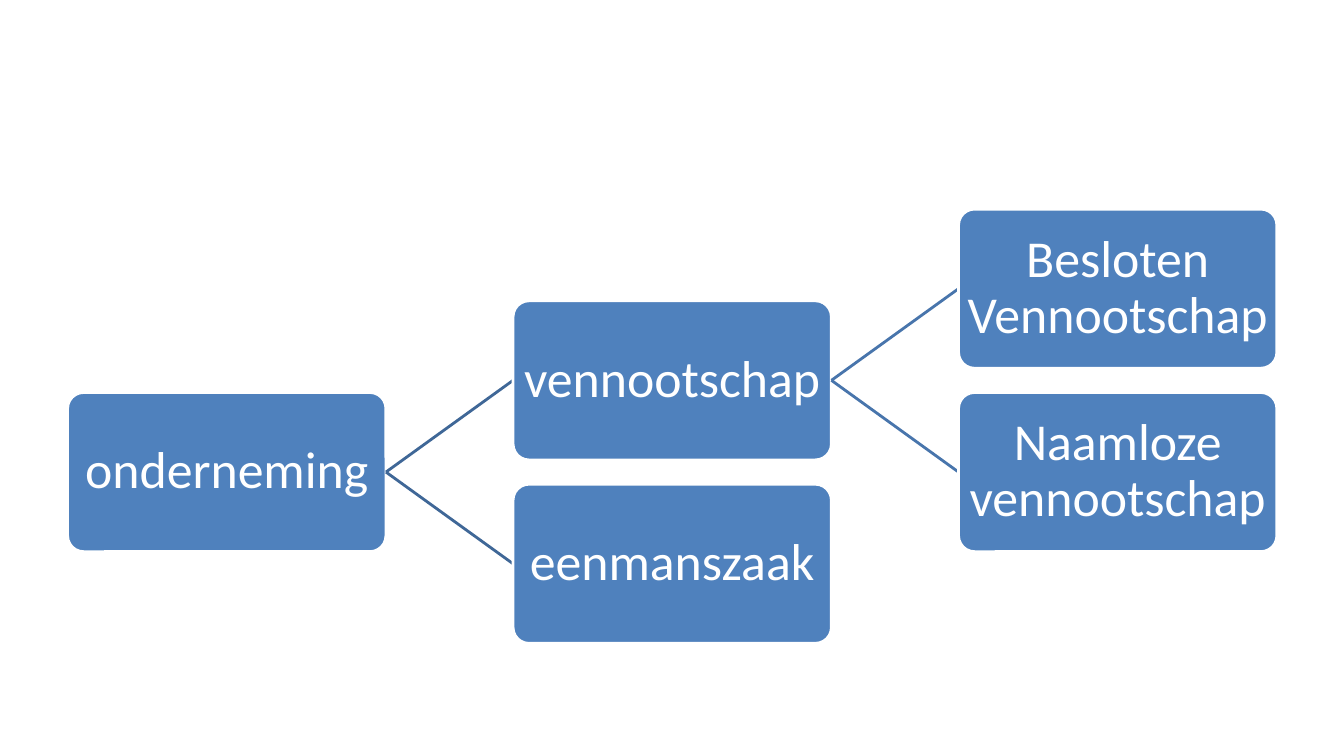
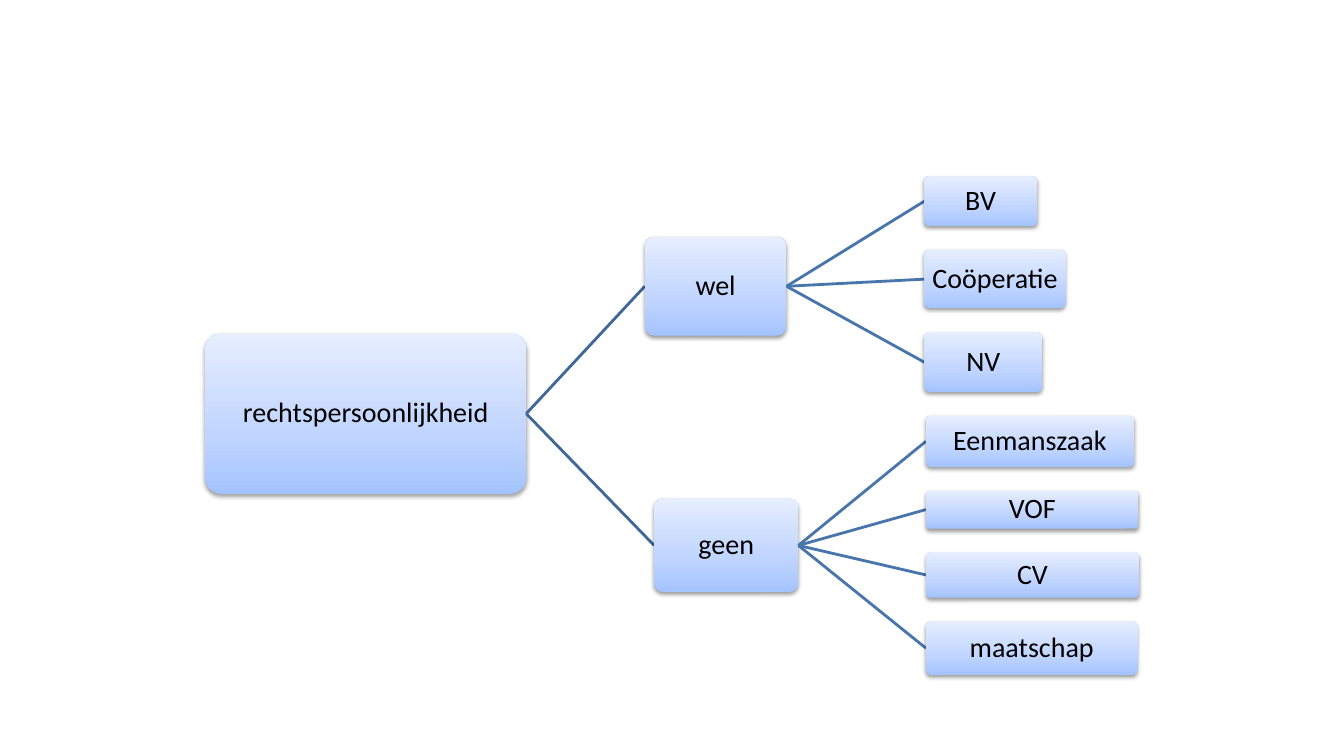
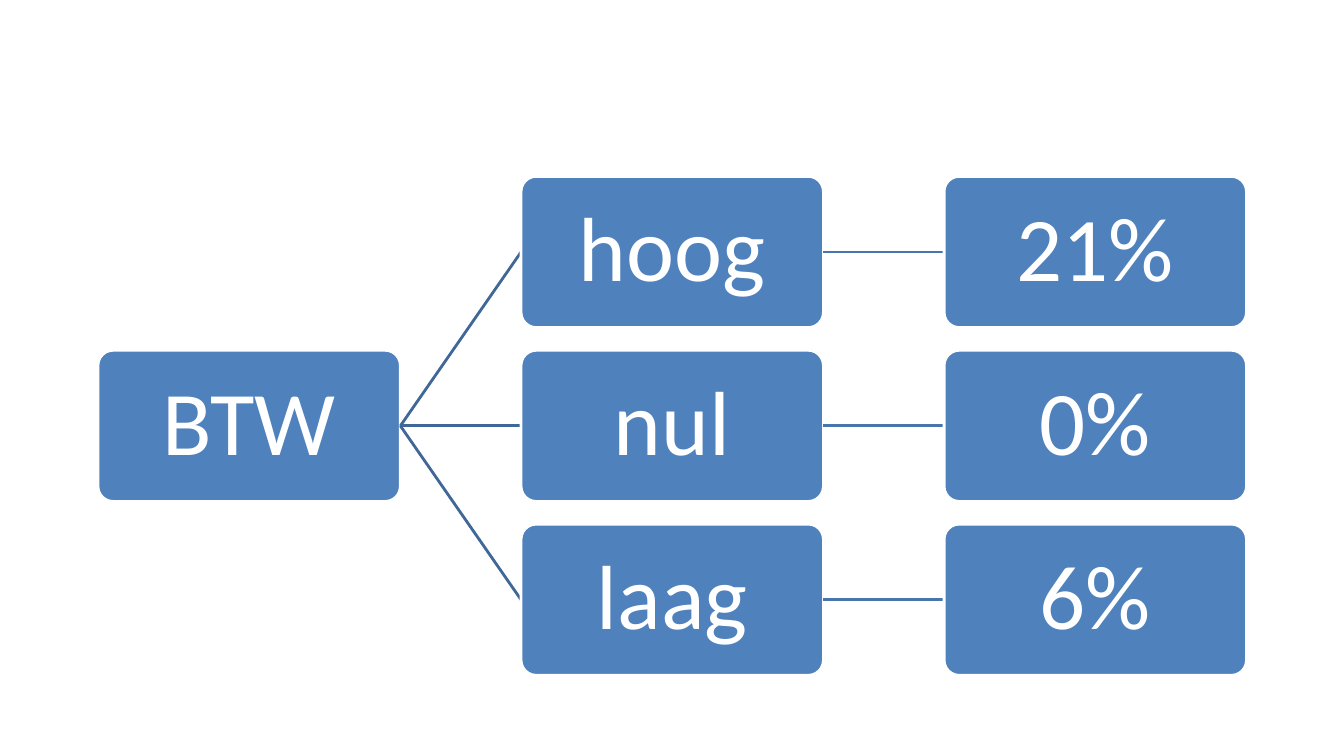
from copy import deepcopy
from dataclasses import dataclass

from lxml import etree
from pptx import Presentation
from pptx.dml.color import RGBColor
from pptx.enum.shapes import MSO_CONNECTOR, MSO_SHAPE
from pptx.enum.text import MSO_ANCHOR, PP_ALIGN
from pptx.oxml.ns import qn
from pptx.presentation import Presentation as PresentationType
from pptx.shapes.autoshape import Shape
from pptx.shapes.connector import Connector
from pptx.slide import Slide
from pptx.util import Pt

ROUNDED = MSO_SHAPE.ROUNDED_RECTANGLE
STRAIGHT = MSO_CONNECTOR.STRAIGHT
CENTER = PP_ALIGN.CENTER
MIDDLE = MSO_ANCHOR.MIDDLE

FONT = "Calibri"
WHITE = "FFFFFF"
BLACK = "000000"
BLUE = "4F81BD"
LINE_COLORS = ("3F6797", "4875AC")
GRADIENT = ((0, "A4C4FF"), (0.35, "BFD4FF"), (1, "E6EEFF"))
LINE_WIDTH = 2
LEFT_SIDE, RIGHT_SIDE = 1, 3
BLANK_LAYOUT = 6
LEAF_GAP = 17


@dataclass(frozen=True)
class Topic:
    text: str
    children: tuple["Topic", ...] = ()


@dataclass(frozen=True)
class Grid:
    left: float
    middle: float
    width: float
    height: float
    column_pitch: float
    row_pitch: float


@dataclass(frozen=True)
class Node:
    text: str
    left: float
    middle: float
    width: float
    height: float
    children: tuple["Node", ...] = ()


@dataclass(frozen=True)
class Style:
    font_size: float
    inset: float
    text_color: str = WHITE
    glossy: bool = False


@dataclass(frozen=True)
class Leaf:
    text: str
    width: float
    height: float


COMPANY = Topic("onderneming", (
    Topic("vennootschap", (
        Topic("Besloten Vennootschap"),
        Topic("Naamloze vennootschap"),
    )),
    Topic("eenmanszaak"),
))
COMPANY_GRID = Grid(48.3, 337.2, 227.4, 113.7, 320.6 - 2.4, 131)

VAT = Topic("BTW", (
    Topic("hoog", (Topic("21%"),)),
    Topic("nul", (Topic("0%"),)),
    Topic("laag", (Topic("6%"),)),
))
VAT_GRID = Grid(70, 304.2, 216, 108, 302.2, 124.2)

WITH_STATUS = (
    Leaf("BV", 80.6, 35.5),
    Leaf("Coöperatie", 101, 41.8),
    Leaf("NV", 84.5, 42.8),
)
WITHOUT_STATUS = (
    Leaf("Eenmanszaak", 148.5, 36.5),
    Leaf("VOF", 151.9, 27),
    Leaf("CV", 152.2, 32.4),
    Leaf("maatschap", 151.2, 38.2),
)


def rgb(color: str) -> RGBColor:
    return RGBColor.from_string(color)


def arrange(topic: Topic, grid: Grid, level: int, middle: float) -> Node:
    first = middle - (len(topic.children) - 1) / 2 * grid.row_pitch
    children = tuple(
        arrange(child, grid, level + 1, first + index * grid.row_pitch)
        for index, child in enumerate(topic.children)
    )
    left = grid.left + level * grid.column_pitch
    return Node(topic.text, left, middle, grid.width, grid.height, children)


def stack(leaves: tuple[Leaf, ...], left: float, top: float) -> tuple[Node, ...]:
    nodes = []
    for leaf in leaves:
        middle = top + leaf.height / 2
        nodes.append(Node(leaf.text, left, middle, leaf.width, leaf.height))
        top += leaf.height + LEAF_GAP
    return tuple(nodes)


def legal_status_tree() -> Node:
    with_status = Node("wel", 460.6, 204.5, 101.2, 70.6,
                       stack(WITH_STATUS, 660.2, 126))
    without_status = Node("geen", 467.3, 389.6, 103, 67,
                          stack(WITHOUT_STATUS, 661.4, 297))
    return Node("rechtspersoonlijkheid", 146.6, 295.5, 229.3, 114.5,
                (with_status, without_status))


def add_gloss(shape: Shape) -> None:
    shape.fill.gradient()
    shape.fill.gradient_angle = 90
    properties = shape._element.spPr
    stop_list = properties.find(qn("a:gradFill")).find(qn("a:gsLst"))
    stop_list.insert(1, deepcopy(stop_list[0]))
    for stop, (position, color) in zip(shape.fill.gradient_stops, GRADIENT):
        stop.position = position
        stop.color.rgb = rgb(color)
    shape.line.fill.background()
    shadow = etree.SubElement(
        properties.find(qn("a:effectLst")), qn("a:outerShdw"),
        blurRad=str(Pt(3.1)), dist=str(Pt(1.6)), dir="5400000", rotWithShape="0")
    shadow_color = etree.SubElement(shadow, qn("a:srgbClr"), val=BLACK)
    etree.SubElement(shadow_color, qn("a:alpha"), val="38000")


def add_label(shape: Shape, text: str, style: Style) -> None:
    frame = shape.text_frame
    frame.word_wrap = True
    frame.vertical_anchor = MIDDLE
    frame.margin_left = frame.margin_right = Pt(style.inset)
    frame.margin_top = frame.margin_bottom = Pt(style.inset)
    paragraph = frame.paragraphs[0]
    paragraph.alignment = CENTER
    paragraph.line_spacing = 0.9
    space_after = etree.SubElement(paragraph._p.get_or_add_pPr(), qn("a:spcAft"))
    etree.SubElement(space_after, qn("a:spcPct"), val="35000")
    run = paragraph.add_run()
    run.text = text
    run.font.name = FONT
    run.font.size = Pt(style.font_size)
    run.font.color.rgb = rgb(style.text_color)


def add_box(slide: Slide, node: Node, style: Style) -> Shape:
    shape = slide.shapes.add_shape(
        ROUNDED, Pt(node.left), Pt(node.middle - node.height / 2),
        Pt(node.width), Pt(node.height))
    shape.adjustments[0] = 0.1
    shape.shadow.inherit = False
    if style.glossy:
        add_gloss(shape)
    else:
        shape.fill.solid()
        shape.fill.fore_color.rgb = rgb(BLUE)
        shape.line.color.rgb = rgb(WHITE)
        shape.line.width = Pt(LINE_WIDTH)
    add_label(shape, node.text, style)
    return shape


def add_branch(slide: Slide, parent: Node, child: Node, color: str) -> Connector:
    connector = slide.shapes.add_connector(
        STRAIGHT, Pt(parent.left + parent.width), Pt(parent.middle),
        Pt(child.left), Pt(child.middle))
    connector.line.color.rgb = rgb(color)
    connector.line.width = Pt(LINE_WIDTH)
    etree.SubElement(connector._element.spPr, qn("a:effectLst"))
    return connector


def draw_tree(slide: Slide, node: Node, style: Style, level: int = 0) -> Shape:
    box = add_box(slide, node, style)
    for child in node.children:
        connector = add_branch(slide, node, child, LINE_COLORS[level])
        child_box = draw_tree(slide, child, style, level + 1)
        connector.begin_connect(box, RIGHT_SIDE)
        connector.end_connect(child_box, LEFT_SIDE)
    return box


def add_tree_slide(presentation: PresentationType, tree: Node, style: Style) -> None:
    slide = presentation.slides.add_slide(presentation.slide_layouts[BLANK_LAYOUT])
    slide.background.fill.solid()
    slide.background.fill.fore_color.rgb = rgb(WHITE)
    draw_tree(slide, tree, style)


def main() -> None:
    presentation = Presentation()
    presentation.slide_width = Pt(960)
    presentation.slide_height = Pt(540)
    company_tree = arrange(COMPANY, COMPANY_GRID, 0, COMPANY_GRID.middle)
    vat_tree = arrange(VAT, VAT_GRID, 0, VAT_GRID.middle)
    add_tree_slide(presentation, company_tree, Style(37, 1.85))
    add_tree_slide(presentation, legal_status_tree(), Style(20, 1, BLACK, True))
    add_tree_slide(presentation, vat_tree, Style(65, 3.25))
    presentation.save("out.pptx")


if __name__ == "__main__":
    main()
